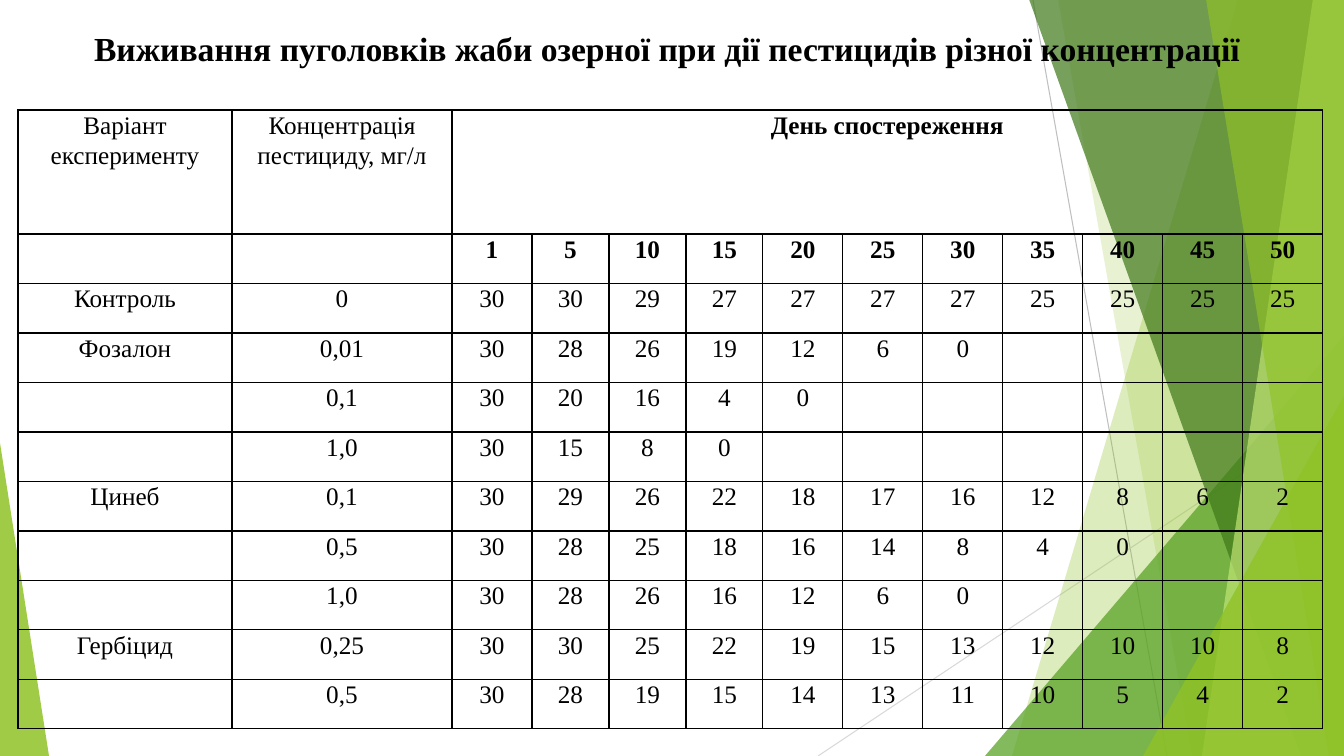
from lxml.etree import SubElement as Sub
from pptx import Presentation
from pptx.dml.color import RGBColor as RGB
from pptx.enum.shapes import MSO_CONNECTOR as Conn, MSO_SHAPE as Shape
from pptx.enum.text import MSO_ANCHOR as Anchor, MSO_AUTO_SIZE as Auto, PP_ALIGN as Align
from pptx.oxml.ns import qn
from pptx.util import Pt

BLACK = RGB(0x00, 0x00, 0x00)
GREY = RGB(0xBF, 0xBF, 0xBF)
PALE = RGB(0xD9, 0xD9, 0xD9)
LIME = RGB(0x90, 0xC2, 0x26)
GREEN = RGB(0x54, 0xA0, 0x21)
DARK = RGB(0x3F, 0x78, 0x19)
LIGHT = RGB(0xC0, 0xE4, 0x74)

TITLE = "Виживання пуголовків жаби озерної при дії пестицидів різної концентрації"
HEAD = ["Варіант експерименту", "Концентрація пестициду, мг/л", "День спостереження"]
DAYS = [1, *range(5, 51, 5)]
# Variant, concentration, survivors on each day
TRIALS = [
    ("Контроль", "0", [30, 30, 29, 27, 27, 27, 27, 25, 25, 25, 25]),
    ("Фозалон", "0,01", [30, 28, 26, 19, 12, 6, 0]),
    ("", "0,1", [30, 20, 16, 4, 0]),
    ("", "1,0", [30, 15, 8, 0]),
    ("Цинеб", "0,1", [30, 29, 26, 22, 18, 17, 16, 12, 8, 6, 2]),
    ("", "0,5", [30, 28, 25, 18, 16, 14, 8, 4, 0]),
    ("", "1,0", [30, 28, 26, 16, 12, 6, 0]),
    ("Гербіцид", "0,25", [30, 30, 25, 22, 19, 15, 13, 12, 10, 10, 8]),
    ("", "0,5", [30, 28, 19, 15, 14, 13, 11, 10, 5, 4, 2]),
]

PX = 914400 / 100.8
WIDE, HIGH = 1344, 756
LINES = [(1033, 0, 1167, HIGH, GREY), (WIDE, 406, 818, HIGH, PALE)]
# Back to front. Bands: top x, bottom x. Triangles: left, top, width, height, apex
DECOR = [
    ((1238, 1012), LIME, 30),
    ((1058, 1192), LIME, 20),
    ((985, 336, 359, 420, 1), GREEN, 72),
    ((1029, 1301), DARK, 70),
    ((1313, 1202), LIGHT, 70),
    ((1206, 1329), LIME, 65),
    ((1143, 396, 201, 360, 1), LIME, 80),
    ((0, 443, 49, 313, 0), LIME, 85),
]
TITLE_BOX = (28, 23, 1229, 50)
INDENT = 49
LEFT, TOP, BOTTOM, HEAD_H = 18, 110, 729, 124
COLS = [214, 220, 80, 77, 77, 77] + [80] * 7
PAD = 7


def emu(*vals):
    return [round(v * PX) for v in vals]


def style(item, **vals):
    for name, val in vals.items():
        setattr(item, name, val)


def write(para, text, size, bold):
    para.alignment = Align.CENTER
    run = para.add_run()
    run.text = text
    style(run.font, name="Times New Roman", size=Pt(size), bold=bold)
    run.font.color.rgb = BLACK


def draw_line(shapes, x1, y1, x2, y2, color):
    line = shapes.add_connector(Conn.STRAIGHT, *emu(x1, y1, x2, y2))
    line.line.color.rgb = color
    line.line.width = Pt(0.75)
    Sub(line._element.spPr, qn("a:effectLst"))


def draw_decor(shapes, geom, color, alpha):
    """Draw a band reaching the right edge, or a right triangle."""
    if len(geom) == 2:
        top, low = geom
        path = shapes.build_freeform(top, -1, scale=PX)
        path.add_line_segments([(WIDE, -1), (WIDE, HIGH), (low, HIGH)], close=True)
        shape = path.convert_to_shape()
    else:
        *box, apex = geom
        shape = shapes.add_shape(Shape.ISOSCELES_TRIANGLE, *emu(*box))
        shape.adjustments[0] = apex
    shape.shadow.inherit = False
    shape.fill.solid()
    shape.fill.fore_color.rgb = color
    shape.line.fill.background()
    tint = shape._element.spPr.find(qn("a:solidFill"))[0]
    Sub(tint, qn("a:alpha"), val=str(alpha * 1000))


def border(cell):
    props = cell._tc.get_or_add_tcPr()
    for side in ("lnL", "lnR", "lnT", "lnB"):
        edge = Sub(props, qn("a:" + side), w=str(Pt(1)))
        fill = Sub(edge, qn("a:solidFill"))
        Sub(fill, qn("a:srgbClr"), val=str(BLACK))


def draw_table(shapes):
    rows = [HEAD, ["", "", *DAYS]] + [[name, dose, *alive] for name, dose, alive in TRIALS]
    box = emu(LEFT, TOP, sum(COLS), BOTTOM - TOP)
    table = shapes.add_table(len(rows), len(COLS), *box).table
    style(table, first_row=False, horz_banding=False)
    for col, width in zip(table.columns, COLS):
        col.width = emu(width)[0]
    row_h = (BOTTOM - TOP - HEAD_H) / (len(rows) - 1)
    side = emu(PAD)[0]
    for r, vals in enumerate(rows):
        table.rows[r].height = emu(row_h if r else HEAD_H)[0]
        for c in range(len(COLS)):
            cell = table.cell(r, c)
            border(cell)
            cell.fill.background()
            style(cell, margin_left=side, margin_right=side, margin_top=0, margin_bottom=0)
            if c < len(vals) and vals[c] != "":
                para = cell.text_frame.paragraphs[0]
                para.line_spacing = 1.07
                write(para, str(vals[c]), 18, r < 2 and c > 1)
    table.cell(0, 2).merge(table.cell(0, len(COLS) - 1))


def place_title(title):
    style(title, **dict(zip(("left", "top", "width", "height"), emu(*TITLE_BOX))))
    frame = title.text_frame
    style(frame, word_wrap=False, auto_size=Auto.SHAPE_TO_FIT_TEXT, vertical_anchor=Anchor.MIDDLE)
    para = frame.paragraphs[0]
    write(para, TITLE, 24, True)
    para._p.get_or_add_pPr().set("indent", str(emu(INDENT)[0]))
    title.element.getparent().append(title.element)


def main():
    deck = Presentation()
    deck.slide_width, deck.slide_height = emu(WIDE, HIGH)
    shapes = deck.slides.add_slide(deck.slide_layouts[5]).shapes
    for line in LINES:
        draw_line(shapes, *line)
    for part in DECOR:
        draw_decor(shapes, *part)
    draw_table(shapes)
    place_title(shapes.title)
    deck.save("out.pptx")


if __name__ == "__main__":
    main()
